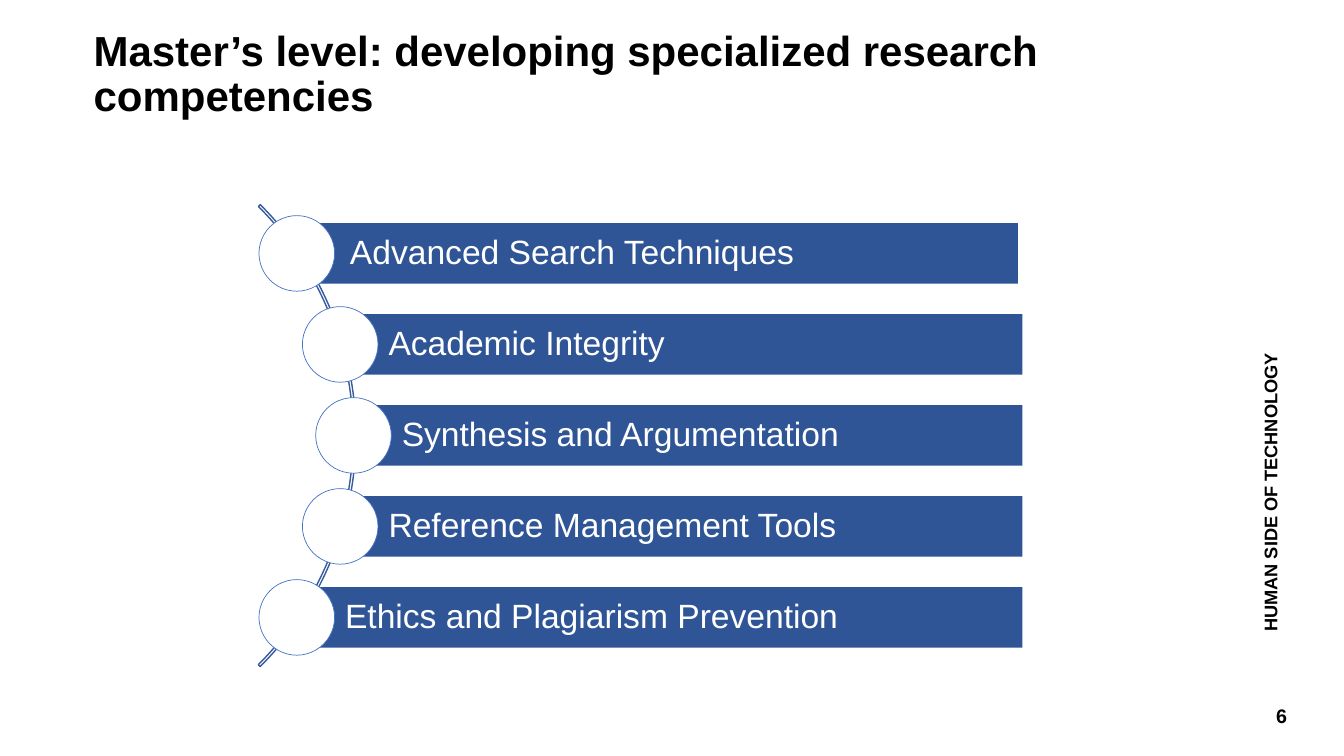
from lxml import etree
from pptx import Presentation
from pptx.dml.color import RGBColor
from pptx.enum import shapes, text
from pptx.util import Pt

BLACK = RGBColor(0, 0, 0)
WHITE = RGBColor(255, 255, 255)
NAVY = RGBColor(0x2F, 0x55, 0x97)
BLUE = RGBColor(0x44, 0x72, 0xC4)
STEEL = RGBColor(0x36, 0x5B, 0x9D)

TOP, MID, LOW = (text.MSO_ANCHOR.TOP, text.MSO_ANCHOR.MIDDLE,
                 text.MSO_ANCHOR.BOTTOM)
LEFT, CENTER = text.PP_ALIGN.LEFT, text.PP_ALIGN.CENTER
SHAPE = shapes.MSO_SHAPE

# words, place, turn, insets, anchor, paragraph format, font size
LABELS = [
    ("6", (879.1, 494.6, 72.7, 28.8), 0, (7.2, 3.6, 7.2, 3.6), LOW,
     {"alignment": CENTER}, 14),
    ("Master’s level: developing specialized research competencies",
     (59.8, 18, 732.2, 77), 0, (7.2, 3.6, 7.2, 3.6), TOP,
     {"alignment": LEFT, "line_spacing": 0.9}, 30),
    ("HUMAN SIDE OF TECHNOLOGY", (740.9, 239, 346.3, 92.2), 270,
     (7.2, 3.6, 7.2, 22), MID, {"alignment": LEFT, "line_spacing": 1.3}, 13),
]

# words, centre of the circle, left and right edge of the bar, left inset
SKILLS = [
    ("Advanced Search Techniques", 212, 208.8, 727.2, 41.2),
    ("Academic Integrity", 243, 243, 730.3, 34.5),
    ("Synthesis and Argumentation", 252.5, 252.5, 730.3, 34.5),
    ("Reference Management Tools", 243, 243, 730.3, 34.5),
    ("Ethics and Plagiarism Prevention", 212, 212, 730.3, 34.5),
]
FIRST, STEP = 181, 65
BAR, DOT = 43.2, 54
ARC = (-212.4, 77.8, 466.6, 466.6)
BEND = (189, 27, 0.004)


def assign(item, values):
    for name, value in values.items():
        setattr(item, name, value)


def write(shape, words, inset, anchor, layout, font):
    frame = shape.text_frame
    sides = ("margin_left", "margin_top", "margin_right", "margin_bottom")
    assign(frame, dict(zip(sides, map(Pt, inset))))
    assign(frame, {"word_wrap": True, "vertical_anchor": anchor})
    para = frame.paragraphs[0]
    assign(para, layout)
    run = para.add_run()
    run.text = words
    color = font.pop("color")
    assign(run.font, {"name": "Arial", **font})
    run.font.color.rgb = color


def draw(slide, kind, box, fill=None, line=None, width=1):
    shape = slide.shapes.add_shape(kind, *map(Pt, box))
    shape.shadow.inherit = False
    for part, color in ((shape.fill, fill), (shape.line.fill, line)):
        if color is None:
            part.background()
        else:
            part.solid()
            part.fore_color.rgb = color
    if line is not None:
        shape.line.width = Pt(width)
    return shape


def main():
    deck = Presentation()
    assign(deck, {"slide_width": Pt(960), "slide_height": Pt(540)})
    slide = deck.slides.add_slide(deck.slide_layouts[6])

    for words, box, turn, inset, anchor, layout, size in LABELS:
        label = slide.shapes.add_textbox(*map(Pt, box))
        label.rotation = turn
        write(label, words, inset, anchor, layout,
              {"size": Pt(size), "bold": True, "color": BLACK})

    arc = draw(slide, SHAPE.BLOCK_ARC, ARC, line=STEEL)
    for i, value in enumerate(BEND):
        arc.adjustments[i] = value

    for i, (words, mid, left, right, inset) in enumerate(SKILLS):
        y = FIRST + i * STEP
        bar = draw(slide, SHAPE.RECTANGLE,
                   (left, y - BAR / 2, right - left, BAR), NAVY)
        write(bar, words, (inset, 5, 5, 5), MID,
              {"alignment": LEFT, "line_spacing": 0.9},
              {"size": Pt(24), "color": WHITE})
        draw(slide, SHAPE.OVAL, (mid - DOT / 2, y - DOT / 2, DOT, DOT),
             WHITE, BLUE, 0.5)

    deck.save("out.pptx")


if __name__ == "__main__":
    main()
